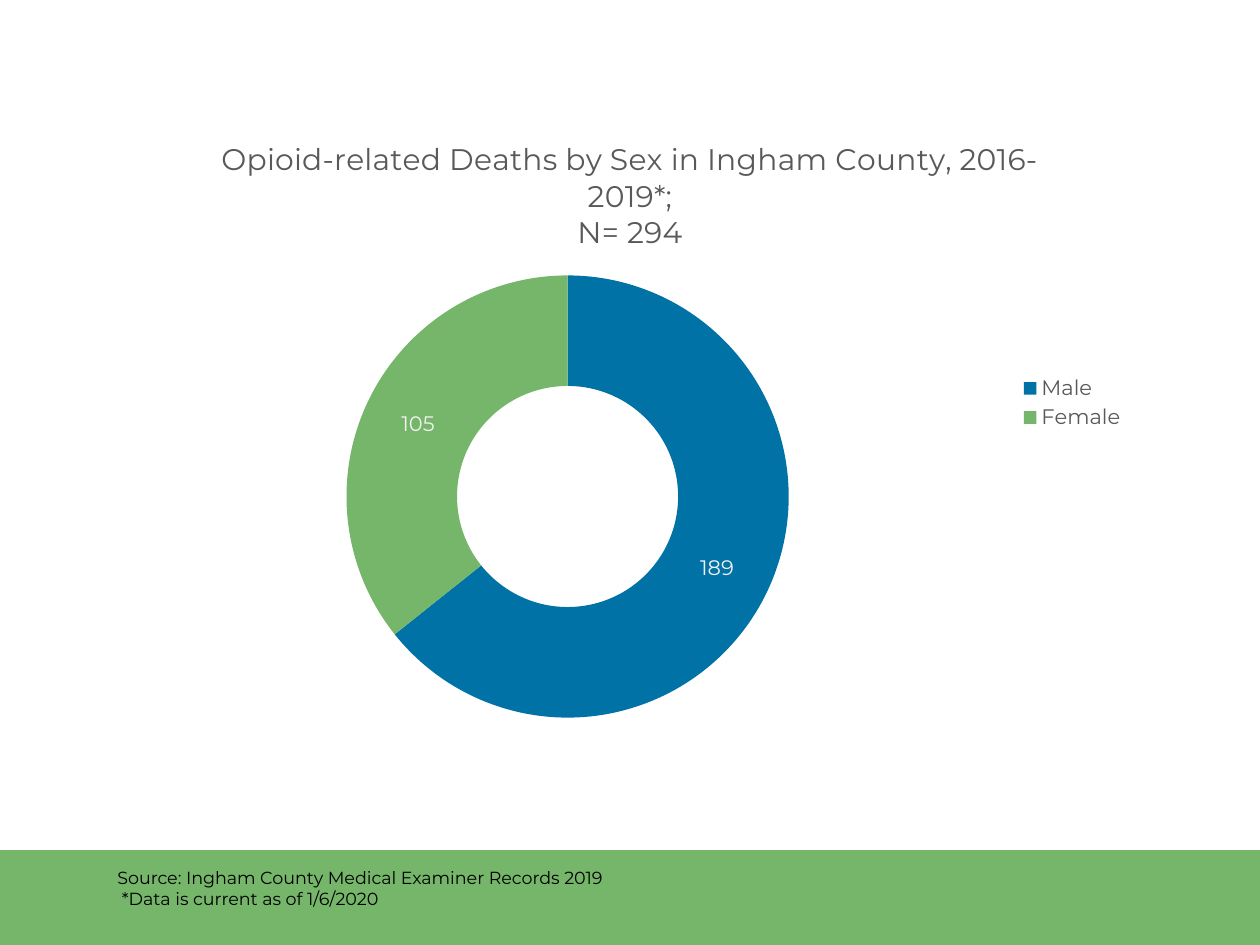
"""Build the slide on opioid-related deaths by sex in Ingham County."""
import pptx
import pptx.chart.data
import pptx.dml.color
import pptx.enum.chart
import pptx.enum.shapes
import pptx.enum.text
import pptx.oxml
import pptx.oxml.ns
import pptx.util

PX = 914400 // 126
FONT = "Montserrat"
BLUE = pptx.dml.color.RGBColor(0x00, 0x72, 0xA6)
GREEN = pptx.dml.color.RGBColor(0x75, 0xB6, 0x6A)
GREY = pptx.dml.color.RGBColor(0x59, 0x59, 0x59)
PALE = pptx.dml.color.RGBColor(0xF2, 0xF2, 0xF2)
BLACK = pptx.dml.color.RGBColor(0, 0, 0)


def px(*lengths):
    return [pptx.util.Emu(n * PX) for n in lengths]


def set_font(font, size, color):
    font.name = FONT
    font.size = pptx.util.Pt(size)
    font.bold = False
    font.color.rgb = color


def set_layout(parent, index, inner, **fractions):
    for old in parent.findall(pptx.oxml.ns.qn("c:layout")):
        parent.remove(old)
    target = '<c:layoutTarget val="inner"/>' if inner else ""
    modes = "".join(f'<c:{k}Mode val="edge"/>' for k in "xy")
    sizes = "".join(f'<c:{k} val="{v}"/>' for k, v in fractions.items())
    parent.insert(index, pptx.oxml.parse_xml(
        f'<c:layout {pptx.oxml.ns.nsdecls("c")}><c:manualLayout>'
        f"{target}{modes}{sizes}</c:manualLayout></c:layout>"))


class Deck:
    def __init__(self, prs):
        self.s = prs.slides.add_slide(prs.slide_layouts[6])

    def bar(self, box, color):
        sp = self.s.shapes.add_shape(
            pptx.enum.shapes.MSO_SHAPE.RECTANGLE, *px(*box))
        sp.shadow.inherit = False
        sp.fill.solid()
        sp.fill.fore_color.rgb = color
        sp.line.fill.background()

    def text(self, box, lines, size, color):
        tf = self.s.shapes.add_textbox(*px(*box)).text_frame
        tf.word_wrap = True
        tf.auto_size = pptx.enum.text.MSO_AUTO_SIZE.SHAPE_TO_FIT_TEXT
        for i, line in enumerate(lines):
            p = tf.add_paragraph() if i else tf.paragraphs[0]
            r = p.add_run()
            r.text = line
            set_font(r.font, size, color)

    def doughnut(self, box, title, values, colors):
        data = pptx.chart.data.CategoryChartData()
        data.categories = list(values)
        data.add_series("Series 1", list(values.values()))
        chart = self.s.shapes.add_chart(
            pptx.enum.chart.XL_CHART_TYPE.DOUGHNUT, *px(*box), data).chart
        set_font(chart.font, 10, BLACK)

        chart.has_title = True
        tf = chart.chart_title.text_frame
        for i, line in enumerate(title):
            p = tf.add_paragraph() if i else tf.paragraphs[0]
            r = p.add_run()
            r.text = line
            set_font(r.font, 17, GREY)

        chart.has_legend = True
        legend = chart.legend
        legend.position = pptx.enum.chart.XL_LEGEND_POSITION.RIGHT
        legend.include_in_layout = False
        set_font(legend.font, 12, GREY)

        plot = chart.plots[0]
        plot.vary_by_categories = True
        for i, color in enumerate(colors):
            fill = plot.series[0].points[i].format.fill
            fill.solid()
            fill.fore_color.rgb = color
        labels = plot.series[0].data_labels
        labels.show_value = True
        labels.show_percentage = False
        set_font(labels.font, 12, PALE)
        return chart


def main():
    prs = pptx.Presentation()
    prs.slide_width, prs.slide_height = px(1260, 945)
    deck = Deck(prs)
    deck.bar((0, 850, 1260, 95), GREEN)
    chart = deck.doughnut(
        (63, 116, 1134, 624),
        ["Opioid-related Deaths by Sex in Ingham County, 2016-2019*;",
         "N= 294"],
        {"Male": 189, "Female": 105}, [BLUE, GREEN])
    plot_area = chart.element.find(".//" + pptx.oxml.ns.qn("c:plotArea"))
    legend = chart.element.find(".//" + pptx.oxml.ns.qn("c:legend"))
    set_layout(plot_area, 0, True, x=0.25, y=0.25, w=0.39, h=0.72)
    set_layout(legend, 1, False, x=0.84, y=0.41, w=0.1, h=0.1)
    deck.text((105, 861, 1018, 55),
              ["Source: Ingham County Medical Examiner Records 2019",
               " *Data is current as of 1/6/2020"], 10, BLACK)
    prs.save("out.pptx")


if __name__ == "__main__":
    main()
